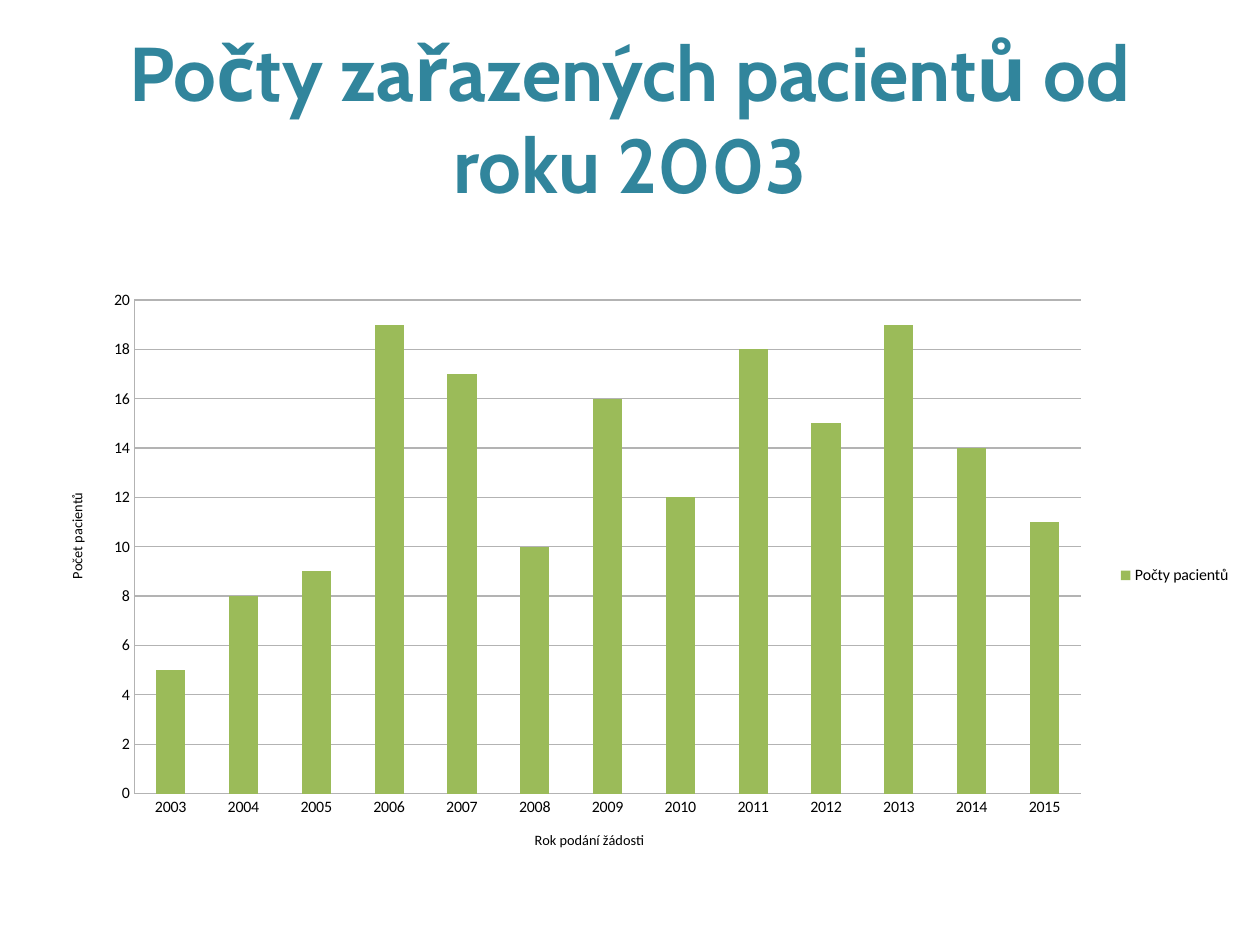
import lxml.etree
import pptx
import pptx.chart.data
import pptx.dml.color
import pptx.enum.chart
import pptx.enum.text
import pptx.oxml.ns
import pptx.util

EMU_PER_PX = 8000  # 1260 by 945 px make 28 by 21 cm
CHART_WIDTH, CHART_HEIGHT = 1198, 593
TEAL = pptx.dml.color.RGBColor(0x31, 0x85, 0x9C)
GREEN = pptx.dml.color.RGBColor(0x9B, 0xBB, 0x59)
GRAY = pptx.dml.color.RGBColor(0xB3, 0xB3, 0xB3)
BLACK = pptx.dml.color.RGBColor(0, 0, 0)

PATIENTS_BY_YEAR = dict(
    zip(range(2003, 2016), [5, 8, 9, 19, 17, 10, 16, 12, 18, 15, 19, 14, 11])
)


def px(length):
    return pptx.util.Emu(length * EMU_PER_PX)


def set_layout(element, index, x, y, size=None):
    """Place a chart part, in px from the chart's top left corner."""
    qn = pptx.oxml.ns.qn
    for old_layout in element.findall(qn("c:layout")):
        element.remove(old_layout)
    layout = lxml.etree.Element(qn("c:layout"))
    manual = lxml.etree.SubElement(layout, qn("c:manualLayout"))
    settings = {"layoutTarget": "outer"} if size else {}
    settings.update(xMode="edge", yMode="edge")
    settings.update(x=x / CHART_WIDTH, y=y / CHART_HEIGHT)
    if size:
        settings.update(w=size[0] / CHART_WIDTH, h=size[1] / CHART_HEIGHT)
    for name, value in settings.items():
        lxml.etree.SubElement(manual, qn(f"c:{name}")).set("val", str(value))
    element.insert(index, layout)


class SlideBuilder:
    title_font = "Cabin"
    chart_font = "Calibri"

    def __init__(self, presentation):
        title_only = presentation.slide_layouts[5]
        self.slide = presentation.slides.add_slide(title_only)

    def style_font(self, font, name, size, color, bold=False):
        font.name = name
        font.size = pptx.util.Pt(size)
        font.color.rgb = color
        font.bold = bold

    def style_line(self, line):
        line.color.rgb = GRAY
        line.width = pptx.util.Pt(0.75)

    def title(self, text, left, top, width, height):
        shape = self.slide.shapes.title
        shape.left, shape.top = px(left), px(top)
        shape.width, shape.height = px(width), px(height)
        frame = shape.text_frame
        frame.text = text
        frame.word_wrap = True
        frame.auto_size = pptx.enum.text.MSO_AUTO_SIZE.NONE
        frame.vertical_anchor = pptx.enum.text.MSO_ANCHOR.MIDDLE
        frame.margin_left = frame.margin_right = 0
        frame.margin_top = frame.margin_bottom = 0
        paragraph = frame.paragraphs[0]
        paragraph.alignment = pptx.enum.text.PP_ALIGN.CENTER
        self.style_font(paragraph.font, self.title_font, 48, TEAL, bold=True)

    def axis(self, axis, title, x, y):
        axis.major_tick_mark = pptx.enum.chart.XL_TICK_MARK.NONE
        axis.minor_tick_mark = pptx.enum.chart.XL_TICK_MARK.NONE
        self.style_line(axis.format.line)
        self.style_font(axis.tick_labels.font, self.chart_font, 10, BLACK)
        frame = axis.axis_title.text_frame
        frame.text = title
        self.style_font(frame.paragraphs[0].font, self.chart_font, 9, BLACK)
        set_layout(axis.axis_title._element, 1, x, y)

    def column_chart(self, name, values, left, top):
        data = pptx.chart.data.CategoryChartData()
        data.categories = [str(year) for year in values]
        data.add_series(name, values.values())
        chart = self.slide.shapes.add_chart(
            pptx.enum.chart.XL_CHART_TYPE.COLUMN_CLUSTERED,
            px(left), px(top), px(CHART_WIDTH), px(CHART_HEIGHT), data,
        ).chart
        self.style_font(chart.font, self.chart_font, 10, BLACK)
        chart.has_title = False
        chart.has_legend = True
        chart.legend.position = pptx.enum.chart.XL_LEGEND_POSITION.RIGHT
        chart.legend.include_in_layout = False
        self.style_font(chart.legend.font, self.chart_font, 10, BLACK)

        plot = chart.plots[0]
        plot.gap_width = 150
        plot.vary_by_categories = False
        fill = plot.series[0].format.fill
        fill.solid()
        fill.fore_color.rgb = GREEN
        plot_area = chart._chartSpace.chart.plotArea
        set_layout(plot_area, 0, 69, 12, size=(967, 525))
        return chart


def main():
    presentation = pptx.Presentation()
    presentation.slide_width, presentation.slide_height = px(1260), px(945)
    builder = SlideBuilder(presentation)
    builder.title("Počty zařazených pacientů od roku 2003", 63, 38, 1134, 158)

    chart = builder.column_chart("Počty pacientů", PATIENTS_BY_YEAR, 45, 279)
    builder.axis(chart.category_axis, "Rok podání žádosti", 487, 549)
    builder.axis(chart.value_axis, "Počet pacientů", 20, 211)
    value_axis = chart.value_axis
    value_axis.minimum_scale, value_axis.maximum_scale = 0, 20
    value_axis.major_unit = 2
    builder.style_line(value_axis.major_gridlines.format.line)
    presentation.save("out.pptx")


if __name__ == "__main__":
    main()
